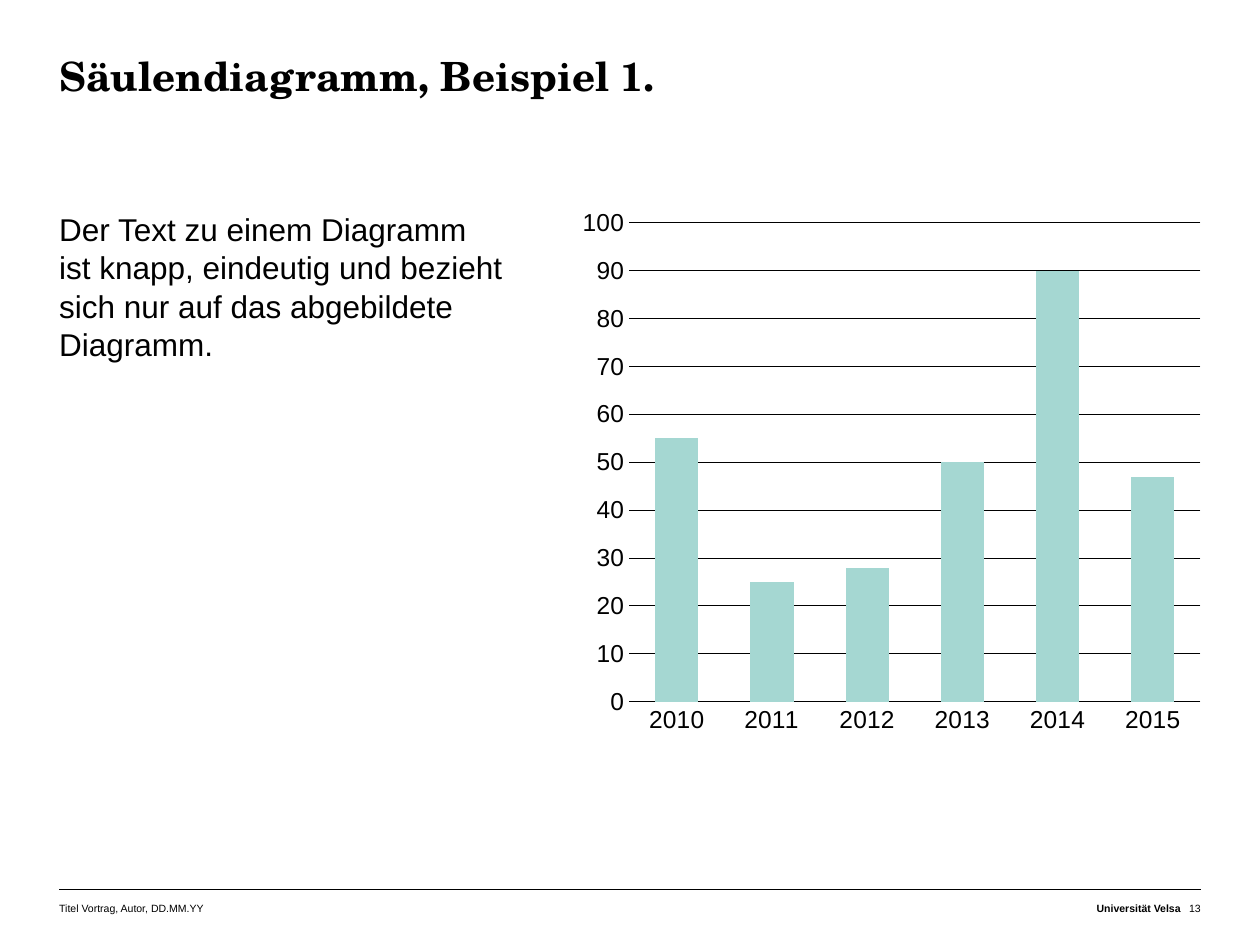
from pptx import Presentation
from pptx.chart.data import CategoryChartData as Data
from pptx.dml.color import RGBColor as RGB
from pptx.enum.chart import XL_CHART_TYPE as Kind, XL_TICK_MARK as Tick
from pptx.enum.shapes import MSO_CONNECTOR as Link
from pptx.enum.text import PP_ALIGN as Align
from pptx.oxml import parse_xml
from pptx.oxml.ns import nsdecls
from pptx.oxml.xmlchemy import OxmlElement
from pptx.util import Inches, Pt

COLORS = {"ink": "000000", "mint": "A5D7D2", "paper": "FFFFFF"}
LEFT, RIGHT = 0.47, 9.53
SALES = {"2010": 55, "2011": 25, "2012": 28, "2013": 50, "2014": 90, "2015": 47}
PLOT = {"x": 0.1, "y": 0.024, "w": 0.9, "h": 0.896}


def tint(name):
    return RGB.from_string(COLORS[name])


def style(font, size, face="Arial", bold=False):
    font.size, font.name, font.bold = Pt(size), face, bold
    font.color.rgb = tint("ink")


def add_text(slide, box, lines, size, face="Arial", bold=False,
             lead=None, align=Align.LEFT, top=0):
    frame = slide.shapes.add_textbox(*map(Inches, box)).text_frame
    frame.word_wrap = True
    frame.margin_left = frame.margin_right = frame.margin_bottom = 0
    frame.margin_top = Inches(top)
    for i, line in enumerate(lines):
        par = frame.add_paragraph() if i else frame.paragraphs[0]
        par.text, par.alignment = line, align
        if lead:
            par.line_spacing = Pt(lead)
        style(par.font, size, face, bold)


def add_rule(slide, y):
    rule = slide.shapes.add_connector(
        Link.STRAIGHT, Inches(LEFT), Inches(y), Inches(RIGHT), Inches(y))
    rule.line.color.rgb = tint("ink")
    rule.line.width = Pt(0.25)
    rule._element.spPr.append(OxmlElement("a:effectLst"))


def place_plot(chart):
    modes = "".join(f'<c:{key}Mode val="edge"/>' for key in "xy")
    sizes = "".join(f'<c:{key} val="{val}"/>' for key, val in PLOT.items())
    area = chart._chartSpace.chart.plotArea
    for old in area.findall("{*}layout"):
        area.remove(old)
    area.insert(0, parse_xml(
        f'<c:layout {nsdecls("c")}><c:manualLayout><c:layoutTarget val="inner"/>'
        f'{modes}{sizes}</c:manualLayout></c:layout>'))


def add_bars(slide, box, values):
    data = Data()
    data.categories = list(values)
    data.add_series("Series 1", list(values.values()))
    chart = slide.shapes.add_chart(
        Kind.COLUMN_CLUSTERED, *map(Inches, box), data).chart
    chart.has_legend = chart.has_title = False
    style(chart.font, 14)
    plot = chart.plots[0]
    plot.gap_width, plot.vary_by_categories = 120, False
    fill = plot.series[0].format.fill
    fill.solid()
    fill.fore_color.rgb = tint("mint")
    cat, val = chart.category_axis, chart.value_axis
    for axis in (cat, val):
        axis.major_tick_mark = axis.minor_tick_mark = Tick.NONE
    val.minimum_scale, val.maximum_scale, val.major_unit = 0, 100, 10
    val.has_major_gridlines = True
    val.format.line.fill.background()
    for line in (cat.format.line, val.major_gridlines.format.line):
        line.color.rgb = tint("ink")
        line.width = Pt(0.5)
    place_plot(chart)


def add_footer(slide):
    add_rule(slide, 7.06)
    for left, width, text, bold, align in (
            (LEFT, 2.36, "Titel Vortrag, Autor, DD.MM.YY", False, Align.LEFT),
            (7.28, 2.09, "Universität Velsa", True, Align.RIGHT),
            (9.37, 0.16, "13", False, Align.RIGHT)):
        add_text(slide, (left, 7.14, width, 0.2), [text], 6,
                 bold=bold, align=align, top=0.02)


def main():
    """Build the column chart slide."""
    deck = Presentation()
    deck.slide_width, deck.slide_height = Inches(10), Inches(7.5)
    slide = deck.slides.add_slide(deck.slide_layouts[6])
    back = slide.background.fill
    back.solid()
    back.fore_color.rgb = tint("paper")
    add_footer(slide)
    add_text(slide, (LEFT, 0.44, RIGHT - LEFT, 0.83),
             ["Säulendiagramm, Beispiel 1."], 23, "TeX Gyre Schola", True, 25)
    add_text(slide, (LEFT, 1.66, 3.66, 3.07),
             ["Der Text zu einem Diagramm \vist knapp, eindeutig und bezieht "
              "sich nur auf das abgebildete", "Diagramm."], 18, lead=22)
    add_bars(slide, (4.49, 1.66, 5.04, 4.25), SALES)
    deck.save("out.pptx")


if __name__ == "__main__":
    main()
